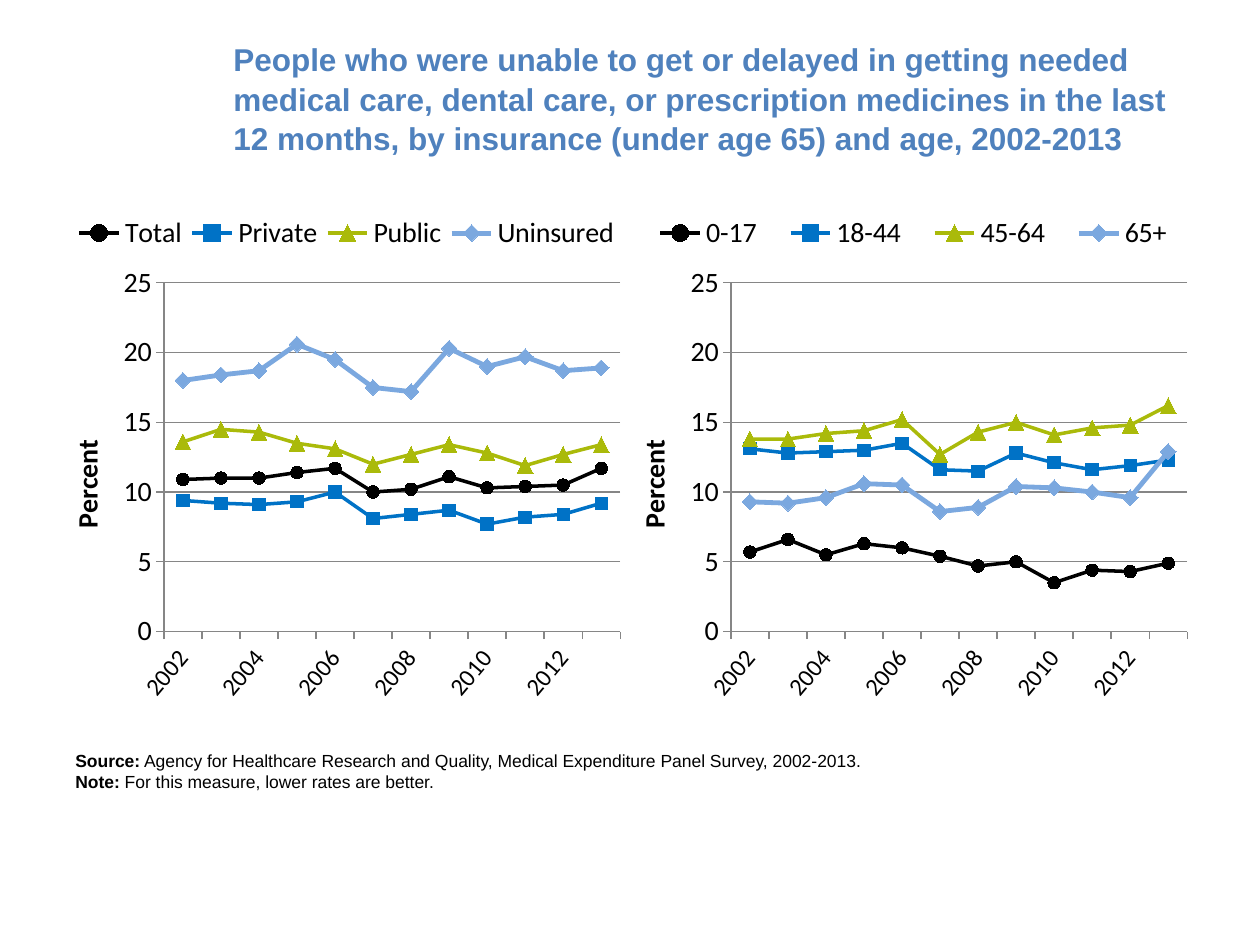
from lxml.etree import SubElement
from pptx import Presentation
from pptx.chart.data import CategoryChartData
from pptx.dml.color import RGBColor
from pptx.enum.chart import XL_CHART_TYPE, XL_LEGEND_POSITION, XL_MARKER_STYLE, XL_TICK_MARK
from pptx.enum.text import MSO_ANCHOR, MSO_AUTO_SIZE, PP_ALIGN
from pptx.oxml.ns import qn
from pptx.util import Cm, Pt

BLACK = RGBColor(0x00, 0x00, 0x00)
BLUE = RGBColor(0x00, 0x72, 0xC6)
GREEN = RGBColor(0xAA, 0xBA, 0x0A)
LIGHT_BLUE = RGBColor(0x7B, 0xA8, 0xDF)
TITLE_BLUE = RGBColor(0x4F, 0x81, 0xBD)
GRAY = RGBColor(0x86, 0x86, 0x86)

TITLE = ("People who were unable to get or delayed in getting needed medical care, "
         "dental care, or prescription medicines in the last 12 months, "
         "by insurance (under age 65) and age, 2002-2013")
NOTES = [
    ("Source:", " Agency for Healthcare Research and Quality, "
                "Medical Expenditure Panel Survey, 2002-2013."),
    ("Note:", " For this measure, lower rates are better."),
]
YEARS = [str(year) for year in range(2002, 2014)]
BY_INSURANCE = {
    "Total": (10.9, 11, 11, 11.4, 11.7, 10, 10.2, 11.1, 10.3, 10.4, 10.5, 11.7),
    "Private": (9.4, 9.2, 9.1, 9.3, 10, 8.1, 8.4, 8.7, 7.7, 8.2, 8.4, 9.2),
    "Public": (13.6, 14.5, 14.3, 13.5, 13.1, 12, 12.7, 13.4, 12.8, 11.9, 12.7, 13.4),
    "Uninsured": (18, 18.4, 18.7, 20.6, 19.5, 17.5, 17.2, 20.3, 19, 19.7, 18.7, 18.9),
}
BY_AGE = {
    "0-17": (5.7, 6.6, 5.5, 6.3, 6, 5.4, 4.7, 5, 3.5, 4.4, 4.3, 4.9),
    "18-44": (13.1, 12.8, 12.9, 13, 13.5, 11.6, 11.5, 12.8, 12.1, 11.6, 11.9, 12.3),
    "45-64": (13.8, 13.8, 14.2, 14.4, 15.2, 12.7, 14.3, 15, 14.1, 14.6, 14.8, 16.2),
    "65+": (9.3, 9.2, 9.6, 10.6, 10.5, 8.6, 8.9, 10.4, 10.3, 10, 9.6, 12.9),
}
STYLES = [
    (BLACK, 2, XL_MARKER_STYLE.CIRCLE, 7),
    (BLUE, 2, XL_MARKER_STYLE.SQUARE, 7),
    (GREEN, 2, XL_MARKER_STYLE.TRIANGLE, 9),
    (LIGHT_BLUE, 2.75, XL_MARKER_STYLE.DIAMOND, 9),
]


def set_font(font, size, name="Calibri", color=BLACK, bold=False):
    """Apply size, typeface, colour and weight."""
    font.size, font.name, font.bold = Pt(size), name, bold
    font.color.rgb = color


def set_layout(parent, index, x, y, w, h, inner=False):
    """Place a chart part by fractions of the chart area."""
    for old in parent.findall(qn("c:layout")):
        parent.remove(old)
    layout = SubElement(parent, qn("c:layout"))
    parent.insert(index, layout)
    manual = SubElement(layout, qn("c:manualLayout"))
    values = [("layoutTarget", "inner")] if inner else []
    values += [("xMode", "edge"), ("yMode", "edge"), ("x", x), ("y", y), ("w", w), ("h", h)]
    for tag, value in values:
        SubElement(manual, qn(f"c:{tag}")).set("val", str(value))


def format_axes(chart):
    """Format the year axis and the percent axis."""
    years, percent = chart.category_axis, chart.value_axis
    for axis, size in ((years, 14), (percent, 16)):
        set_font(axis.tick_labels.font, size)
        axis.major_tick_mark = XL_TICK_MARK.OUTSIDE
        axis.minor_tick_mark = XL_TICK_MARK.NONE
        axis.format.line.color.rgb = GRAY
        axis.format.line.width = Pt(0.75)
    years.has_major_gridlines = False
    cat_ax = chart._chartSpace.find(".//" + qn("c:catAx"))
    cat_ax.find(qn("c:txPr")).find(qn("a:bodyPr")).set("rot", "-3000000")
    skip = SubElement(cat_ax, qn("c:tickLblSkip"))
    skip.set("val", "2")
    cat_ax.find(qn("c:noMultiLvlLbl")).addprevious(skip)

    percent.minimum_scale, percent.maximum_scale, percent.major_unit = 0, 25, 5
    percent.tick_labels.number_format = "0"
    percent.tick_labels.number_format_is_linked = False
    percent.has_major_gridlines = True
    percent.major_gridlines.format.line.color.rgb = GRAY
    percent.major_gridlines.format.line.width = Pt(0.75)
    tf = percent.axis_title.text_frame
    tf.text = "Percent"
    set_font(tf.paragraphs[0].font, 16, bold=True)


def add_line_chart(s, left, series):
    """Add a line chart with markers and a legend on top."""
    data = CategoryChartData(number_format="0.0")
    data.categories = YEARS
    for name, values in series.items():
        data.add_series(name, values)
    chart = s.shapes.add_chart(XL_CHART_TYPE.LINE_MARKERS, left, Cm(4.06),
                               Cm(11.43), Cm(10.67), data).chart
    set_font(chart.font, 10, "Arial")
    chart.has_title = False
    chart.plots[0].vary_by_categories = False
    for line, (color, width, marker, size) in zip(chart.plots[0].series, STYLES):
        line.smooth = False
        line.format.line.color.rgb = color
        line.format.line.width = Pt(width)
        line.marker.style, line.marker.size = marker, size
        line.marker.format.fill.solid()
        line.marker.format.fill.fore_color.rgb = color
        line.marker.format.line.color.rgb = color
    format_axes(chart)
    chart.has_legend = True
    chart.legend.position = XL_LEGEND_POSITION.TOP
    chart.legend.include_in_layout = False
    set_font(chart.legend.font, 16)
    root = chart._chartSpace
    set_layout(root.find(".//" + qn("c:legend")), 1, 0.01, 0.01, 0.98, 0.1)
    set_layout(root.find(".//" + qn("c:plotArea")), 0, 0.178, 0.154, 0.805, 0.659, True)


def set_title(s):
    """Move, fill and format the title placeholder."""
    sp = s.shapes.title
    sp.left, sp.top, sp.width, sp.height = Cm(4.45), Cm(0.76), Cm(19.69), Cm(2.41)
    tf = sp.text_frame
    tf.text = TITLE
    tf.word_wrap, tf.auto_size = True, MSO_AUTO_SIZE.NONE
    tf.vertical_anchor = MSO_ANCHOR.MIDDLE
    p = tf.paragraphs[0]
    p.alignment, p.line_spacing = PP_ALIGN.LEFT, 1.05
    set_font(p.font, 18, "Arial", TITLE_BLUE, True)


def add_notes(s):
    """Add the source and note lines, each with a bold label."""
    tf = s.shapes.add_textbox(Cm(1.27), Cm(14.99), Cm(22.86), Cm(1.12)).text_frame
    tf.word_wrap, tf.auto_size = True, MSO_AUTO_SIZE.SHAPE_TO_FIT_TEXT
    for i, (label, text) in enumerate(NOTES):
        p = tf.add_paragraph() if i else tf.paragraphs[0]
        set_font(p.font, 10, "Arial")
        for part, bold in ((label, True), (text, False)):
            r = p.add_run()
            r.text = part
            set_font(r.font, 10, "Arial", bold=bold)


def main():
    """Build the slide and save it."""
    prs = Presentation()
    prs.slide_width, prs.slide_height = Cm(25.4), Cm(19.05)
    s = prs.slides.add_slide(prs.slide_layouts[5])
    set_title(s)
    add_line_chart(s, Cm(1.27), BY_INSURANCE)
    add_line_chart(s, Cm(12.7), BY_AGE)
    add_notes(s)
    prs.save("out.pptx")


if __name__ == "__main__":
    main()
